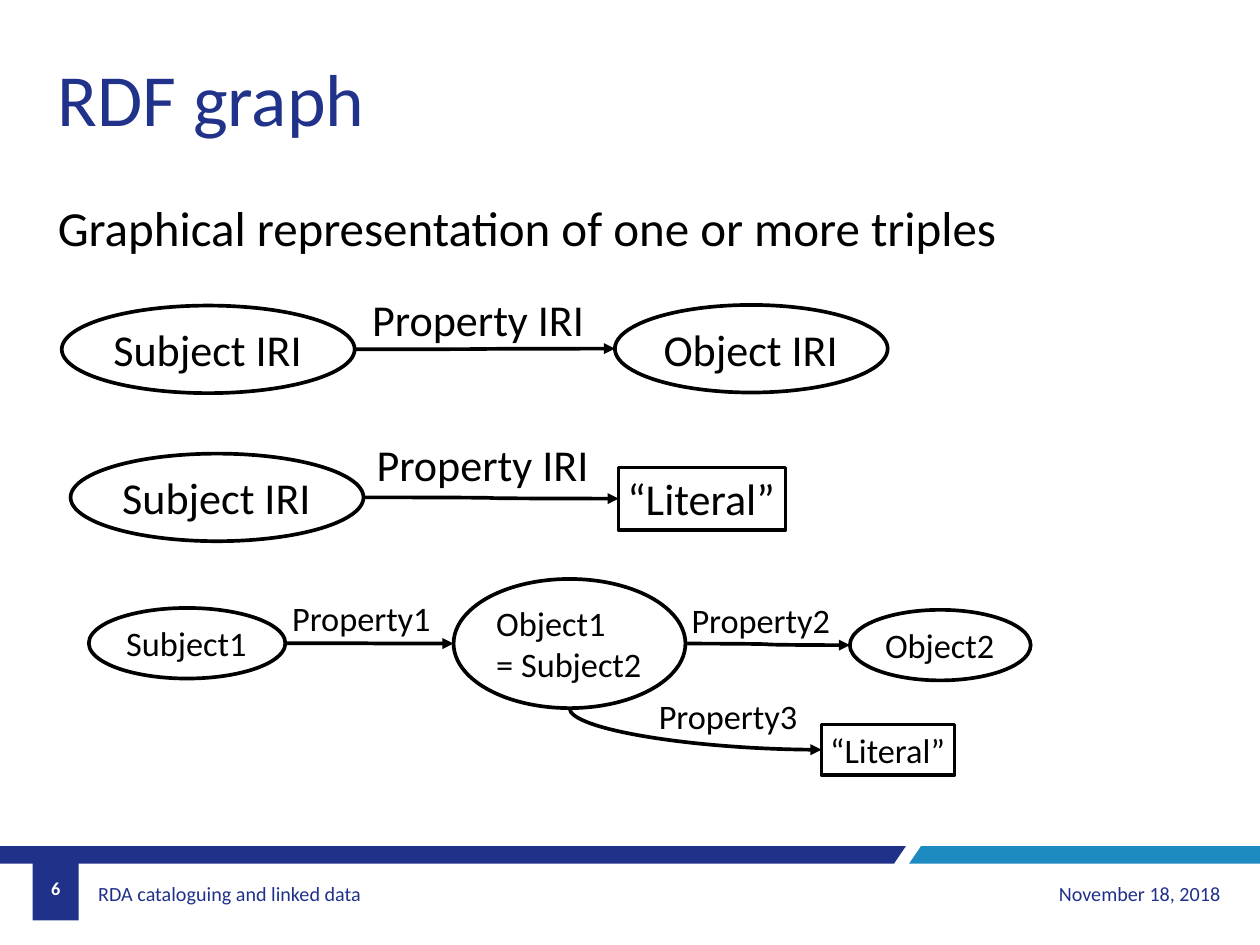
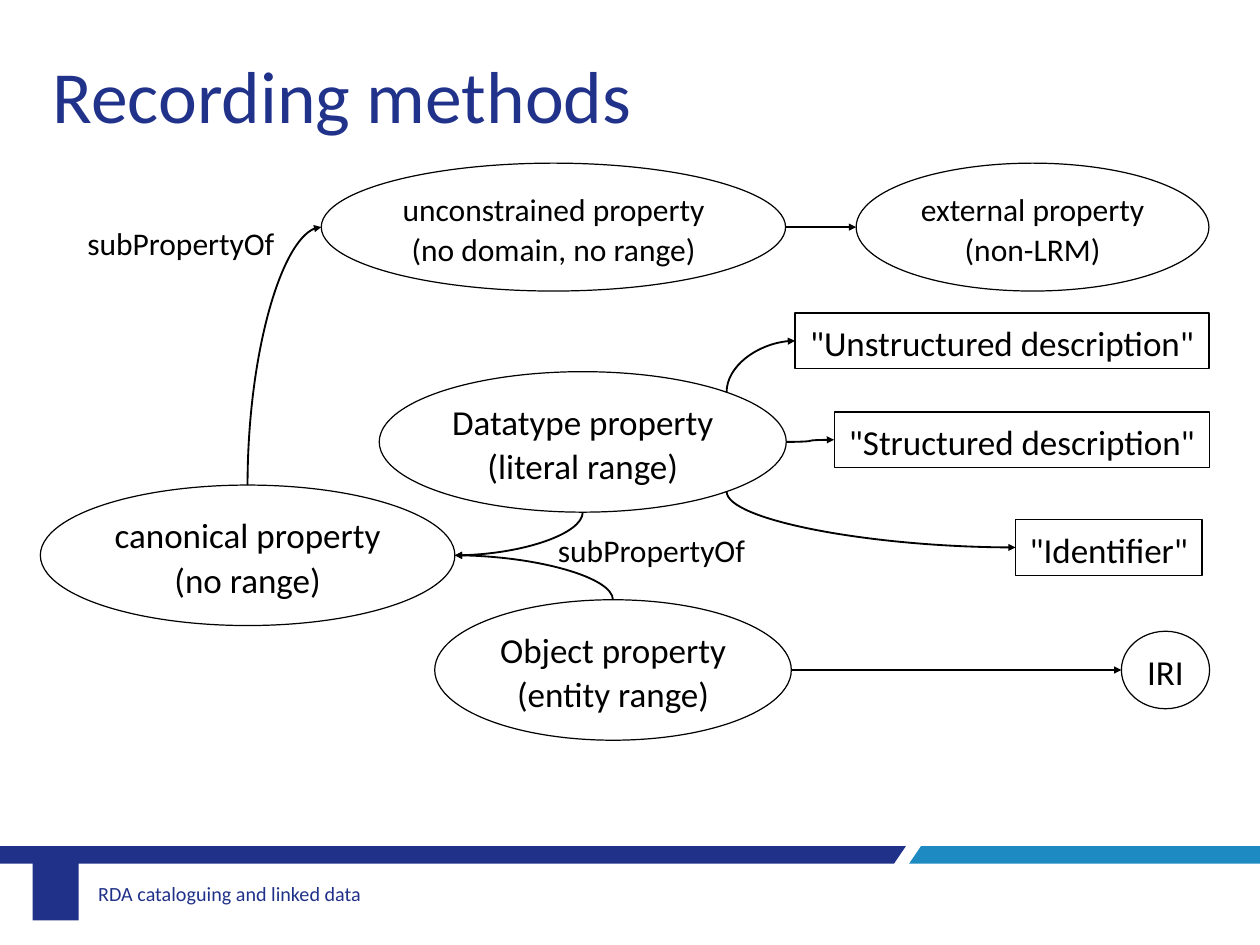
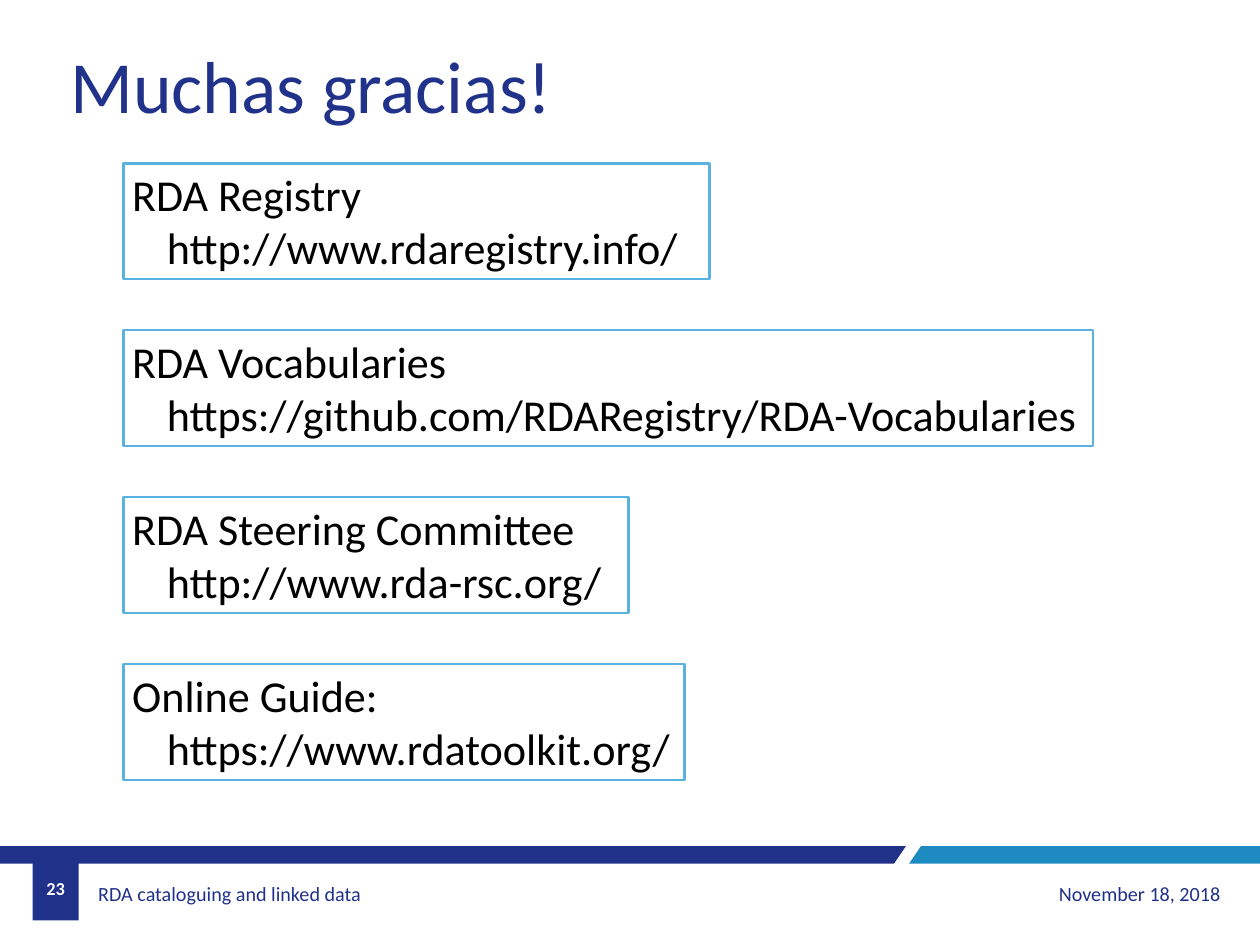
import dataclasses
import math

import lxml.etree
import pptx
import pptx.dml.color
import pptx.enum.shapes
import pptx.enum.text
import pptx.oxml.ns
import pptx.util

Kind = pptx.enum.shapes.MSO_SHAPE
Side = pptx.enum.text.PP_ALIGN
Fit = pptx.enum.text.MSO_AUTO_SIZE
Rgb = pptx.dml.color.RGBColor.from_string
tag = pptx.oxml.ns.qn


@dataclasses.dataclass(frozen=True)
class Theme:
    font: str = "Calibri"
    navy: str = "203189"
    blue: str = "1D8BC1"
    sky: str = "59B2DF"
    head: str = "21328A"
    ink: str = "000000"
    paper: str = "FFFFFF"
    title: float = 60
    lead: float = 40
    body: float = 36
    large: float = 28.6
    small: float = 28
    note: float = 25.7
    foot: float = 16.4
    page: float = 14.9


theme = Theme()
deck = pptx.Presentation()
deck.slide_width = pptx.util.Inches(14.28)
deck.slide_height = pptx.util.Inches(10.71)

# Grid of square cells: 100 columns by 75 rows
cell = deck.slide_width / 100


def put(slide, box, text, size, kind=None, color=theme.ink, bold=False, fill=None,
        edge=None, width=1, align=Side.LEFT, middle=False, wrap=False, pad=(0.1, 0.05),
        lead=None, hang=0):
    """Place text, in a preset shape if a kind is given, on the grid."""
    area = [round(v * cell) for v in box]
    if kind is None:
        shape = slide.shapes.add_textbox(*area)
    else:
        shape = slide.shapes.add_shape(kind, *area)
        shape.shadow.inherit = False
        if fill:
            shape.fill.solid()
            shape.fill.fore_color.rgb = Rgb(fill)
        else:
            shape.fill.background()
        if edge:
            shape.line.color.rgb = Rgb(edge)
            shape.line.width = pptx.util.Pt(width)
        else:
            shape.line.fill.background()
    frame = shape.text_frame
    anchor = pptx.enum.text.MSO_ANCHOR
    across, down = map(pptx.util.Inches, pad)
    form = {"word_wrap": wrap, "auto_size": Fit.NONE if wrap else Fit.SHAPE_TO_FIT_TEXT,
            "vertical_anchor": anchor.MIDDLE if middle else anchor.TOP,
            "margin_left": across, "margin_right": across,
            "margin_top": down, "margin_bottom": down}
    for key, val in form.items():
        setattr(frame, key, val)
    face = {"name": theme.font, "size": pptx.util.Pt(size), "bold": bold}
    for num, line in enumerate(text.split("\n") if text else []):
        para = frame.add_paragraph() if num else frame.paragraphs[0]
        para.alignment = align
        if lead:
            para.line_spacing = lead
        if num and hang:
            para._p.get_or_add_pPr().set("marL", str(round(hang * cell)))
        run = para.add_run()
        run.text = line
        for key, val in face.items():
            setattr(run.font, key, val)
        run.font.color.rgb = Rgb(color)
    return shape


# Sites: share of the half width and height, then index on an ellipse and a rectangle
slant = math.sqrt(0.5)
sites = {"t": (0, -1, 0, 0), "l": (-1, 0, 2, 1), "b": (0, 1, 4, 2), "r": (1, 0, 6, 3),
         "br": (slant, slant, 5, None), "tr": (slant, -slant, 7, None)}


def link(slide, start, exit, stop, entry, width):
    """Join two nodes with a curved arrow; one bend if it leaves up or down."""
    ends, glue = [], []
    for node, name in ((start, exit), (stop, entry)):
        across, down, oval, rect = sites[name]
        ends += [node.left + node.width * (1 + across) / 2,
                 node.top + node.height * (1 + down) / 2]
        round_one = node.auto_shape_type == Kind.OVAL
        glue.append((node.shape_id, oval if round_one else rect))
    bend = exit not in ("l", "r")
    if bend:
        # Ends turned back a quarter, so that the rotation brings them into place
        x, y, far, low = ends
        mid, row = (x + far) / 2, (y + low) / 2
        run, rise = (far - x) / 2, (low - y) / 2
        ends = [mid - rise, row + run, mid + rise, row - run]
    curve = pptx.enum.shapes.MSO_CONNECTOR.CURVE
    line = slide.shapes.add_connector(curve, *[round(v) for v in ends])
    line.line.color.rgb = Rgb(theme.ink)
    line.line.width = pptx.util.Pt(width)
    props = line._element.spPr
    if bend:
        props.find(tag("a:xfrm")).set("rot", "5400000")
        props.find(tag("a:prstGeom")).set("prst", "curvedConnector2")
    tip = lxml.etree.SubElement(props.find(tag("a:ln")), tag("a:tailEnd"))
    tip.set("type", "triangle")
    lxml.etree.SubElement(props, tag("a:effectLst"))
    hold = line._element.nvCxnSpPr.cNvCxnSpPr
    for name, (ident, index) in zip(("a:stCxn", "a:endCxn"), glue):
        join = lxml.etree.SubElement(hold, tag(name))
        join.set("id", str(ident))
        join.set("idx", str(index))


# Shared layout: bands, page tab and footer, drawn once and moved to the layout
blank = deck.slide_layouts[6]
for spare in list(blank.placeholders):
    spare._element.getparent().remove(spare._element)
pages = [deck.slides.add_slide(blank) for _ in range(3)]
graph, record, thanks = pages

top, base = 67.15, 68.55
bands = [(theme.navy, [(71.9, top), (0, top), (0, base), (70.95, base)]),
         (theme.blue, [(100, top), (73.1, top), (72.15, base), (100, base)])]
parts = []
for color, spots in bands:
    first, *rest = [(round(x * cell), round(y * cell)) for x, y in spots]
    pen = graph.shapes.build_freeform(*first)
    pen.add_line_segments(rest, close=True)
    band = pen.convert_to_shape()
    band.shadow.inherit = False
    band.fill.solid()
    band.fill.fore_color.rgb = Rgb(color)
    band.line.fill.background()
    parts.append(band)
parts.append(put(graph, (2.6, top, 3.65, 5.9), "", theme.page, Kind.RECTANGLE,
                 fill=theme.navy))
parts.append(put(graph, (7.3, 69, 38.65, 3.85), "RDA cataloguing and linked data",
                 theme.foot, color=theme.navy, middle=True, wrap=True, pad=(0.07, 0.04)))
for part in parts:
    blank.shapes._spTree.append(part._element)

# Titles
titles = [("RDF graph", (3.9, 3.85, 57.2, 8.55)),
          ("Recording methods", (3.5, 3.65, 53.1, 8.55)),
          ("Muchas gracias!", (4.9, 2.8, 40, 7.8))]
for page, (text, box) in zip(pages, titles):
    put(page, box, text, theme.title, color=theme.head, wrap=True)

# Dates and page numbers
for page, num in ((graph, "6"), (thanks, "23")):
    put(page, (71.9, 69, 25.65, 3.85), "November 18, 2018", theme.foot,
        color=theme.navy, align=Side.RIGHT, middle=True, wrap=True)
    put(page, (2.6, base, 3.65, 3.85), num, theme.page, color=theme.paper, bold=True,
        align=Side.CENTER, middle=True, wrap=True)

# Diagrams: nodes, labels and links
put(graph, (3.9, 15.35, 76.7, 5.4), "Graphical representation of one or more triples",
    theme.lead)

oval, rect = Kind.OVAL, Kind.RECTANGLE
body, large, small, note = theme.body, theme.large, theme.small, theme.note
charts = [
    {"page": graph, "pen": 3,
     "look": {"width": 3},
     "tone": {},
     "nodes": {
         "sub a": (oval, (4.9, 24.25, 23.25, 6.95), "Subject IRI", body),
         "obj a": (oval, (48.8, 24.2, 21.65, 6.95), "Object IRI", body),
         "sub b": (oval, (5.6, 36, 23.25, 6.95), "Subject IRI", body),
         "lit b": (rect, (49.1, 37.1, 13.25, 4.95), "“Literal”", body),
         "sub c": (oval, (7.05, 48.25, 15.6, 5.6), "Subject1", small),
         "hub": (oval, (36, 45.95, 18.4, 10.25), "Object1\n= Subject2", small),
         "obj c": (oval, (67.45, 48.4, 14.35, 5.6), "Object2", small),
         "lit c": (rect, (65.2, 57.5, 10.55, 4), "“Literal”", small)},
     "labels": [
         ((28.85, 22.85, 18.4, 4.95), "Property IRI", body),
         ((29.2, 34.4, 18.4, 4.95), "Property IRI", body),
         ((22.5, 47.05, 12.55, 4), "Property1", small),
         ((54.2, 47.2, 12.55, 4), "Property2", small),
         ((51.6, 54.85, 12.55, 4), "Property3", small)],
     "links": [("sub a", "r", "obj a", "l"), ("sub b", "r", "lit b", "l"),
               ("sub c", "r", "hub", "l"), ("hub", "r", "obj c", "l"),
               ("hub", "b", "lit c", "l")]},
    {"page": record, "pen": 1.5,
     "look": {"width": 1, "fill": theme.paper, "align": Side.CENTER,
              "pad": (0.14, 0.07), "lead": 1.05},
     "tone": {"pad": (0.14, 0.07), "lead": 1.06},
     "nodes": {
         "object": (oval, (34.5, 47.6, 28.3, 11.15), "Object property\n(entity range)", large),
         "loose": (rect, (63.1, 24.85, 32.85, 4.4), '"Unstructured description"', large),
         "data": (oval, (30.1, 29.5, 32.3, 11.15), "Datatype property\n(literal range)", large),
         "strict": (rect, (66.2, 32.7, 29.8, 4.4), '"Structured description"', large),
         "ident": (rect, (80.6, 41.25, 14.8, 4.4), '"Identifier"', large),
         "iri": (oval, (89, 50.1, 7, 6.15), "IRI", large),
         "canon": (oval, (3.2, 38.5, 32.9, 11.15), "canonical property\n(no range)", large),
         "free": (oval, (25.5, 12.95, 36.85, 10.15),
                  "unconstrained property\n(no domain, no range)", note),
         "outer": (oval, (67.95, 12.95, 28, 10.15), "external property\n(non-LRM)", note)},
     "labels": [((5.95, 17.1, 17, 4.05), "subPropertyOf", note),
                ((43.3, 41.45, 17, 4.05), "subPropertyOf", note)],
     "links": [("data", "tr", "loose", "l"), ("data", "r", "strict", "l"),
               ("data", "br", "ident", "l"), ("data", "b", "canon", "r"),
               ("object", "t", "canon", "r"), ("object", "r", "iri", "l"),
               ("canon", "t", "free", "l"), ("free", "r", "outer", "l")]},
]
for chart in charts:
    page, nodes = chart["page"], {}
    for name, (kind, box, text, size) in chart["nodes"].items():
        nodes[name] = put(page, box, text, size, kind, edge=theme.ink, **chart["look"])
    for start, exit, stop, entry in chart["links"]:
        link(page, nodes[start], exit, nodes[stop], entry, chart["pen"])
    for box, text, size in chart["labels"]:
        put(page, box, text, size, **chart["tone"])

# Web addresses in equal rows
sources = [("RDA Registry\nhttp://www.rdaregistry.info/", 46.5),
           ("RDA Vocabularies\nhttps://github.com/RDARegistry/RDA-Vocabularies", 76.95),
           ("RDA Steering Committee\nhttp://www.rda-rsc.org/", 40.1),
           ("Online Guide:\nhttps://www.rdatoolkit.org/", 44.5)]
for num, (text, wide) in enumerate(sources):
    put(thanks, (9.8, 12.95 + 13.25 * num, wide, 9.2), text, body, rect,
        edge=theme.sky, width=2.25, hang=2.75)

deck.save("out.pptx")
